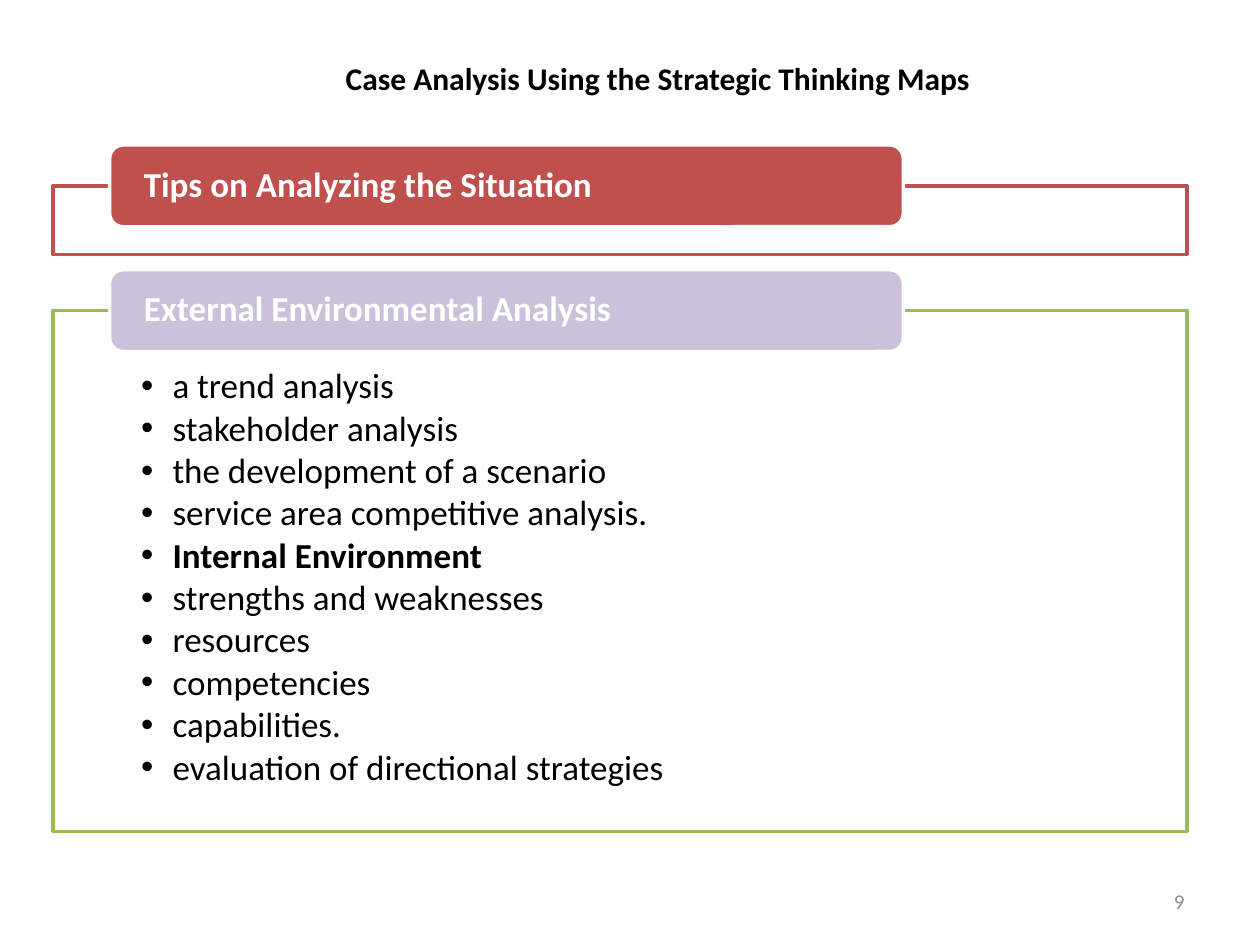
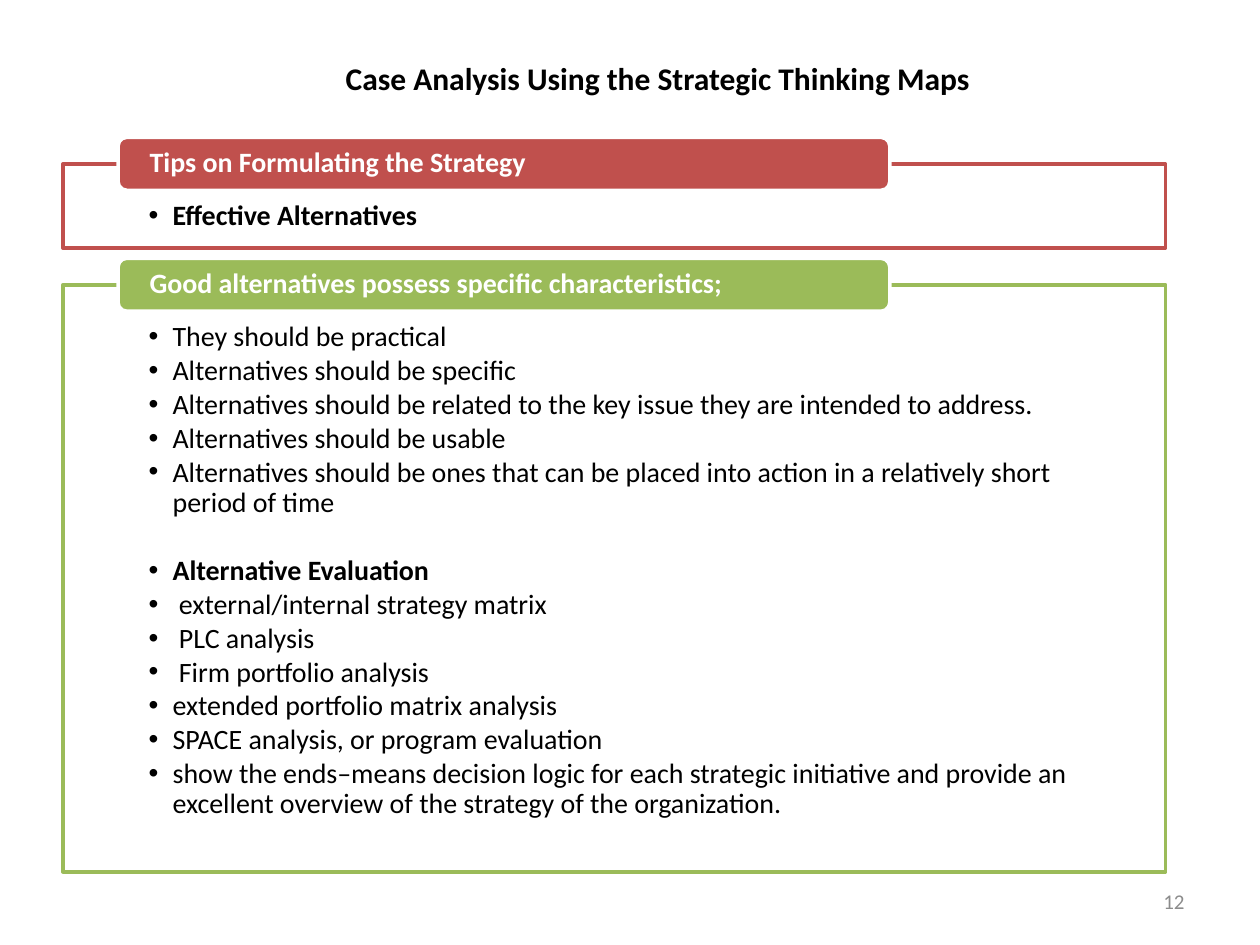
from lxml import etree
from pptx import Presentation
from pptx.dml.color import RGBColor
from pptx.enum.shapes import MSO_SHAPE
from pptx.enum.text import MSO_ANCHOR, MSO_AUTO_SIZE, PP_ALIGN
from pptx.oxml.ns import qn
from pptx.util import Inches, Pt

RECTANGLE, ROUNDED = MSO_SHAPE.RECTANGLE, MSO_SHAPE.ROUNDED_RECTANGLE
TOP, MIDDLE = MSO_ANCHOR.TOP, MSO_ANCHOR.MIDDLE
LEFT, CENTER, RIGHT = PP_ALIGN.LEFT, PP_ALIGN.CENTER, PP_ALIGN.RIGHT

FONT = "Calibri"
COLORS = {
    "text": "000000",
    "white": "FFFFFF",
    "number": "8C8C8C",
    "red": "C0504D",
    "green": "9BBB59",
    "lilac": "CCC1DA",
}
TITLE = "Case Analysis Using the Strategic Thinking Maps "

# Content: list items are plain strings, or dicts when they need formatting
SLIDES = [
    {
        "number": "9", "left": 0.42, "width": 9, "size": 20,
        "tab_height": 0.65, "tab_inset": 0.24, "list_top": 0.46, "hanging": 0.25,
        "sections": [
            {"heading": "Tips on Analyzing the Situation", "tab": "red", "frame": "red",
             "top": 1.15, "bottom": 2.02, "items": []},
            {"heading": "External Environmental Analysis", "tab": "lilac", "frame": "green",
             "top": 2.14, "bottom": 6.6, "items": [
                 "a trend analysis",
                 "stakeholder analysis",
                 "the development of a scenario",
                 "service area competitive analysis.",
                 {"text": "Internal Environment", "bold": True},
                 "strengths and weaknesses",
                 "resources",
                 "competencies",
                 "capabilities.",
                 "evaluation of directional strategies",
             ]},
        ],
    },
    {
        "number": "12", "left": 0.5, "width": 8.75, "size": 16,
        "tab_height": 0.42, "tab_inset": 0.23, "list_top": 0.3, "hanging": 0.19,
        "sections": [
            {"heading": "Tips on Formulating the Strategy", "tab": "red", "frame": "red",
             "top": 1.09, "bottom": 1.97, "items": [
                 {"text": "Effective Alternatives", "bold": True},
             ]},
            {"heading": "Good alternatives possess speciﬁc characteristics;",
             "tab": "green", "frame": "green", "top": 2.05, "bottom": 6.92, "items": [
                 "They should be practical",
                 "Alternatives should be speciﬁc",
                 "Alternatives should be related to the key issue they are intended to address.",
                 "Alternatives should be usable",
                 "Alternatives should be ones that can be placed into action in a relatively "
                 "short period of time",
                 {"text": "Alternative Evaluation", "bold": True, "before": 19.7},
                 {"text": "external/internal strategy matrix", "nudge": 0.05},
                 {"text": "PLC analysis", "nudge": 0.05},
                 {"text": "Firm portfolio analysis", "nudge": 0.05},
                 "extended portfolio matrix analysis",
                 "SPACE analysis, or program evaluation",
                 "show the ends–means decision logic for each strategic initiative and provide "
                 "an excellent overview of the strategy of the organization.",
             ]},
        ],
    },
]

# Proportions shared by all sections, as shares of the frame width
TAB_OFFSET, TAB_WIDTH, LIST_INSET = 0.05, 0.7, 0.0777
LINE_SPACING = 0.9
ITEM_GAP = 0.13  # share of the font size
LAYOUT_BY_LIST_COUNT = {1: 1, 2: 3}


def color(name):
    return RGBColor.from_string(COLORS[name])


def place(shape, left, top, width, height):
    shape.left, shape.top = Inches(left), Inches(top)
    shape.width, shape.height = Inches(width), Inches(height)


def paint(shape, fill, line):
    shape.fill.solid()
    shape.fill.fore_color.rgb = color(fill)
    shape.line.color.rgb = color(line)
    shape.line.width = Pt(2)


def set_frame(shape, anchor, insets=(0.1, 0.05, 0.1, 0.05)):
    frame = shape.text_frame
    frame.word_wrap = True
    frame.auto_size = MSO_AUTO_SIZE.NONE
    frame.vertical_anchor = anchor
    (frame.margin_left, frame.margin_top,
     frame.margin_right, frame.margin_bottom) = map(Inches, insets)
    return frame


def write(paragraph, text, size, color_name, bold=False, align=LEFT):
    paragraph.text = text
    paragraph.alignment = align
    font = paragraph.font
    font.name, font.size, font.bold = FONT, Pt(size), bold
    font.color.rgb = color(color_name)


def add_bullet(paragraph, hanging, nudge):
    properties = paragraph._p.get_or_add_pPr()
    properties.set("marL", str(Inches(hanging + nudge)))
    properties.set("indent", str(-Inches(hanging + nudge)))
    etree.SubElement(properties, qn("a:buFont")).set("typeface", "Arial")
    etree.SubElement(properties, qn("a:buChar")).set("char", "•")


def fill_list(shape, items, page):
    side = page["width"] * LIST_INSET
    frame = set_frame(shape, TOP, (side, page["list_top"], side, 0.12))
    for index, item in enumerate(items):
        item = {"text": item} if isinstance(item, str) else item
        paragraph = frame.add_paragraph() if index else frame.paragraphs[0]
        add_bullet(paragraph, page["hanging"], item.get("nudge", 0))
        write(paragraph, item["text"], page["size"], "text", item.get("bold", False))
        paragraph.line_spacing = LINE_SPACING
        paragraph.space_before = Pt(item.get("before", 0))
        paragraph.space_after = Pt(page["size"] * ITEM_GAP)


def add_section(slide, section, page, bodies):
    left, width, tab_height = page["left"], page["width"], page["tab_height"]

    # Outlined frame, which starts halfway down its tab
    frame_top = section["top"] + tab_height / 2
    if section["items"]:
        frame = next(bodies)
        fill_list(frame, section["items"], page)
    else:
        frame = slide.shapes.add_shape(RECTANGLE, 0, 0, 0, 0)
        frame.shadow.inherit = False
    place(frame, left, frame_top, width, section["bottom"] - frame_top)
    paint(frame, "white", section["frame"])

    # Heading tab
    tab = slide.shapes.add_shape(ROUNDED, 0, 0, 0, 0)
    tab.shadow.inherit = False
    place(tab, left + width * TAB_OFFSET, section["top"], width * TAB_WIDTH, tab_height)
    paint(tab, section["tab"], "white")
    inset = page["tab_inset"]
    heading = set_frame(tab, MIDDLE, (inset, 0, inset, 0)).paragraphs[0]
    write(heading, section["heading"], page["size"], "white", bold=True)
    heading.line_spacing = LINE_SPACING


def add_page(presentation, page):
    list_count = sum(bool(section["items"]) for section in page["sections"])
    layout = presentation.slide_layouts[LAYOUT_BY_LIST_COUNT[list_count]]
    slide = presentation.slides.add_slide(layout)

    # Title
    title = slide.shapes.title
    place(title, 2, 0.42, 6.5, 0.4)
    write(set_frame(title, TOP).paragraphs[0], TITLE, 18, "text", True, CENTER)

    # Sections
    bodies = iter(list(slide.placeholders)[1:])
    for section in page["sections"]:
        add_section(slide, section, page, bodies)

    # Page number
    number = slide.shapes.add_textbox(0, 0, 0, 0)
    place(number, 7.17, 6.95, 2.33, 0.4)
    write(set_frame(number, MIDDLE).paragraphs[0], page["number"], 12, "number", align=RIGHT)


def main():
    presentation = Presentation()
    presentation.slide_width, presentation.slide_height = Inches(10), Inches(7.5)
    for page in SLIDES:
        add_page(presentation, page)
    presentation.save("out.pptx")


if __name__ == "__main__":
    main()
